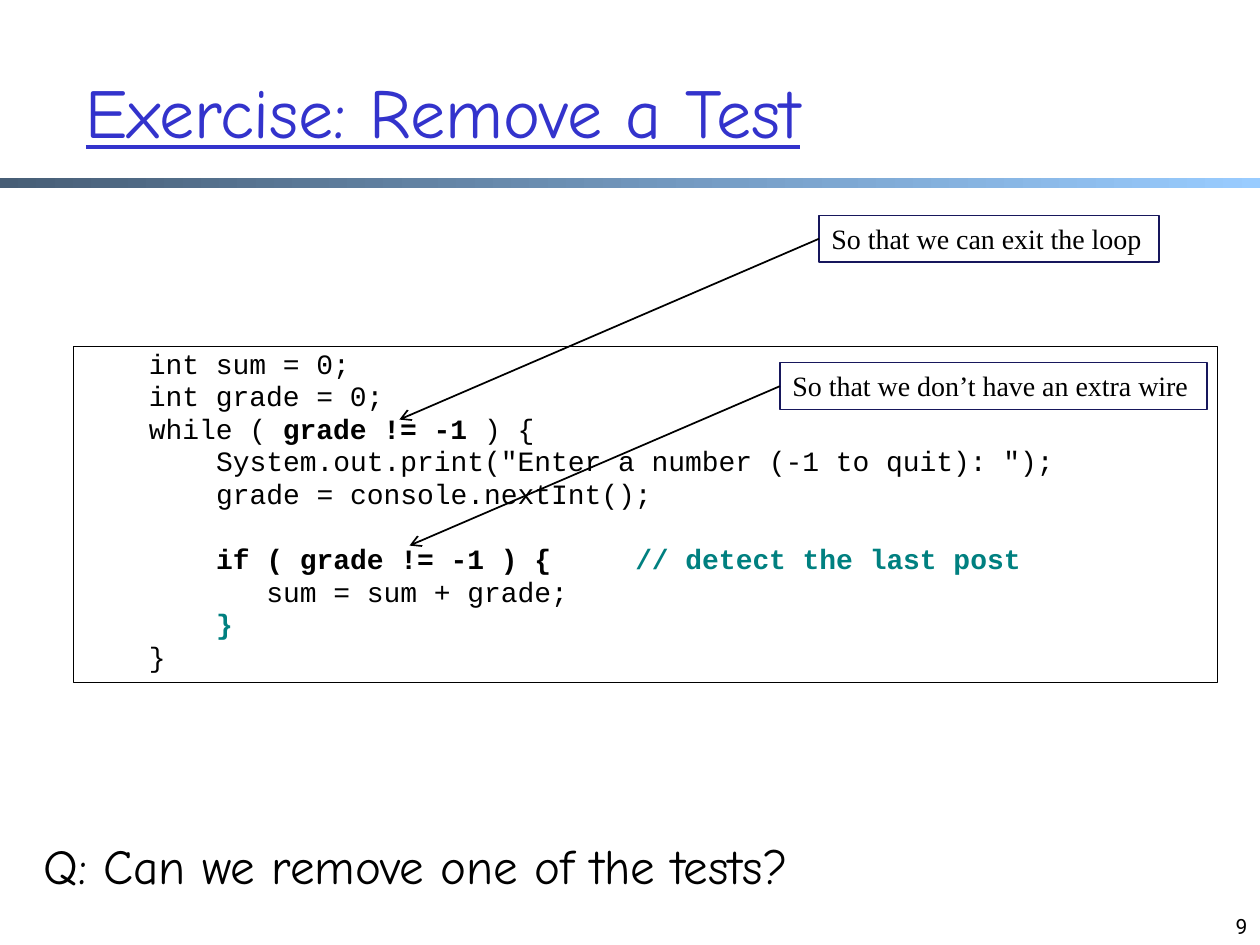
"""Build the "Remove a Test" exercise slide."""
from dataclasses import dataclass
from typing import Optional

from lxml.etree import SubElement
from pptx import Presentation
from pptx.dml.color import RGBColor
from pptx.enum.shapes import MSO_CONNECTOR, MSO_SHAPE
from pptx.enum.text import MSO_ANCHOR, MSO_AUTO_SIZE, PP_ALIGN
from pptx.oxml.ns import qn
from pptx.util import Emu, Inches, Pt

COLS, ROWS = 100, 75
CELL = Inches(0.1)


@dataclass(frozen=True)
class Theme:
    title: str = "3333CC"
    ink: str = "000000"
    accent: str = "008080"
    frame: str = "17175C"
    bar_start: str = "475E76"
    bar_end: str = "99CCFF"
    display: str = "Comic Neue"
    code: str = "Courier New"
    note: str = "Times New Roman"
    number: str = "Roboto"
    title_size: int = 40
    question_size: int = 28
    body_size: int = 16
    number_size: int = 12


T = Theme()
CHAR = Pt(T.body_size * 0.6)
CODE_INSET = Inches(0.5)
LINE_GAP = Pt(3.25)
BLANK_LINE = Pt(18.5)


@dataclass(frozen=True)
class Box:
    col: float
    row: float
    cols: float
    rows: float

    def emu(self) -> tuple:
        return tuple(cells(v) for v in (self.col, self.row, self.cols, self.rows))


@dataclass(frozen=True)
class Span:
    text: str
    bold: bool = False
    color: str = T.ink
    underline: bool = False
    extra_chars: int = 0


@dataclass(frozen=True)
class CodeLine:
    spans: tuple
    indent: int = 0
    after_blank: bool = False


@dataclass(frozen=True)
class Callout:
    text: str
    box: Box
    tip: tuple


CODE = (
    CodeLine((Span("int sum = 0;"),)),
    CodeLine((Span("int grade = 0;"),)),
    CodeLine((Span("while ( "), Span("grade != -1 ", True), Span(") {"))),
    CodeLine((Span('System.out.print("Enter a number (-1 to quit): ");'),), 4),
    CodeLine((Span("grade = console.nextInt();"),), 4),
    CodeLine((Span("if ( grade != -1 ) {", True), Span(" ", True, extra_chars=4),
              Span("// detect the last post", True, T.accent)), 4, True),
    CodeLine((Span("sum = sum + grade;"),), 7),
    CodeLine((Span("}", True, T.accent),), 4),
    CodeLine((Span("}"),)),
)

CALLOUTS = (
    Callout("So that we can exit the loop", Box(65, 17.1, 27, 3.7), (31.7, 33.3)),
    Callout("So that we don’t have an extra wire", Box(61.9, 28.8, 33.9, 3.7),
            (32.5, 43.3)),
)


def cells(n: float) -> Emu:
    return Emu(round(n * CELL))


def rgb(color: str) -> RGBColor:
    return RGBColor.from_string(color)


def add_span(p, span: Span, font: str, size: int) -> None:
    r = p.add_run()
    r.text = span.text
    r.font.name, r.font.size = font, Pt(size)
    r.font.bold, r.font.underline = span.bold, span.underline
    r.font.color.rgb = rgb(span.color)
    if span.extra_chars:
        r._r.get_or_add_rPr().set("spc", str(round(span.extra_chars * CHAR.pt * 100)))


def add_box(s, box: Box, wrap: bool = True, anchor=MSO_ANCHOR.TOP,
            frame: Optional[str] = None):
    sp = s.shapes.add_textbox(*box.emu())
    tf = sp.text_frame
    tf.word_wrap = wrap
    tf.auto_size = MSO_AUTO_SIZE.NONE if wrap else MSO_AUTO_SIZE.SHAPE_TO_FIT_TEXT
    tf.vertical_anchor = anchor
    if frame:
        sp.line.color.rgb = rgb(frame)
        sp.line.width = Pt(0.75)
    return sp


def add_label(s, box: Box, span: Span, font: str, size: int,
              align=PP_ALIGN.LEFT, **options):
    sp = add_box(s, box, **options)
    p = sp.text_frame.paragraphs[0]
    p.alignment = align
    add_span(p, span, font, size)
    return sp


def add_bar(s, box: Box) -> None:
    sp = s.shapes.add_shape(MSO_SHAPE.RECTANGLE, *box.emu())
    sp.shadow.inherit = False
    sp.line.fill.background()
    sp.fill.gradient()
    sp.fill.gradient_angle = 0
    for stop, color, position in zip(sp.fill.gradient_stops,
                                     (T.bar_start, T.bar_end), (0, 1)):
        stop.color.rgb = rgb(color)
        stop.position = position


def add_code(s, box: Box, lines: tuple) -> None:
    tf = add_box(s, box, frame=T.ink).text_frame
    for i, line in enumerate(lines):
        p = tf.add_paragraph() if i else tf.paragraphs[0]
        p.line_spacing = 0.8
        p.space_before = Emu(LINE_GAP + (BLANK_LINE if line.after_blank else 0))
        pPr = p._p.get_or_add_pPr()
        pPr.set("marL", str(CODE_INSET + line.indent * CHAR))
        pPr.set("indent", "0")
        for span in line.spans:
            add_span(p, span, T.code, T.body_size)


def add_callout(s, callout: Callout) -> None:
    sp = add_label(s, callout.box, Span(callout.text), T.note, T.body_size,
                   wrap=False, frame=T.frame)
    tip = [cells(v) for v in callout.tip]
    arrow = s.shapes.add_connector(MSO_CONNECTOR.STRAIGHT, sp.left, sp.top, *tip)
    arrow.begin_connect(sp, 1)
    arrow.line.color.rgb = rgb(T.ink)
    arrow.line.width = Pt(1)
    SubElement(arrow.line._get_or_add_ln(), qn("a:tailEnd"), type="arrow")
    SubElement(arrow._element.spPr, qn("a:effectLst"))


def main() -> None:
    prs = Presentation()
    prs.slide_width, prs.slide_height = cells(COLS), cells(ROWS)
    s = prs.slides.add_slide(prs.slide_layouts[6])
    add_bar(s, Box(0, 14.1, COLS, 0.8))
    add_label(s, Box(5.83, 2.5, 85, 12.5),
              Span("Exercise: Remove a Test", color=T.title, underline=True),
              T.display, T.title_size, anchor=MSO_ANCHOR.MIDDLE)
    add_code(s, Box(5.83, 27.5, 90.8, 26.7), CODE)
    for callout in CALLOUTS:
        add_callout(s, callout)
    add_label(s, Box(2.5, 65.8, 67.7, 5.7), Span("Q: Can we remove one of the tests?"),
              T.display, T.question_size, wrap=False)
    add_label(s, Box(76.7, 70, 23.3, 5), Span("9"), T.number, T.number_size,
              align=PP_ALIGN.RIGHT, anchor=MSO_ANCHOR.BOTTOM)
    prs.save("out.pptx")


if __name__ == "__main__":
    main()
